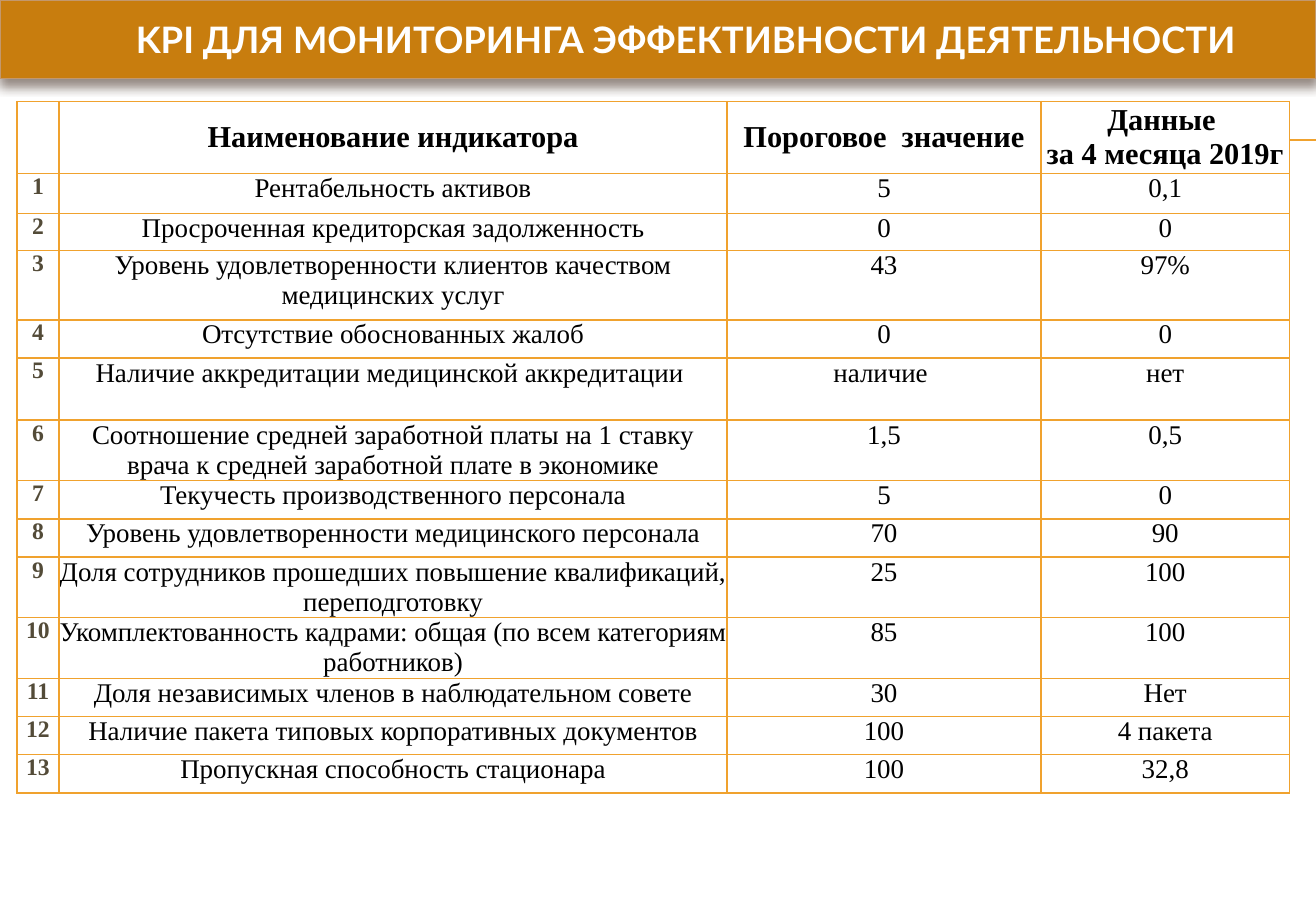
from lxml import etree
from pptx import Presentation
from pptx import util as u
from pptx.dml import color
from pptx.enum import shapes, text
from pptx.oxml import ns, parse_xml

SERIF = "Times New Roman"
ORANGE = "F0A22E"
HEADINGS = ["", "Наименование индикатора", "Пороговое  значение", "Данные \nза 4 месяца 2019г"]
INDICATORS = [
    ("Рентабельность активов", "5", "0,1", 23.7),
    ("Просроченная кредиторская задолженность", "0", "0", 22.2),
    ("Уровень удовлетворенности клиентов качеством медицинских услуг", "43", "97%", 41),
    ("Отсутствие обоснованных жалоб", "0", "0", 22.6),
    ("Наличие аккредитации медицинской аккредитации ", "наличие ", "нет", 36.8),
    ("Соотношение средней заработной платы на 1 ставку врача к средней "
     "заработной плате в экономике", "1,5", "0,5", 36),
    ("Текучесть производственного персонала", "5", "0", 22.6),
    ("Уровень удовлетворенности медицинского персонала", "70", "90", 22.6),
    ("Доля сотрудников прошедших повышение квалификаций, переподготовку", "25", "100", 36),
    ("Укомплектованность кадрами: общая (по всем категориям работников)", "85", "100", 36),
    ("Доля независимых членов в наблюдательном совете", "30", "Нет", 22.6),
    ("Наличие пакета типовых корпоративных документов", "100", "4 пакета", 22.6),
    ("Пропускная способность стационара", "100", "32,8", 22.6),
]


def rgb(value):
    return color.RGBColor.from_string(value)


def format_text(frame, size, font, shade, bold):
    for para in frame.paragraphs:
        para.alignment = text.PP_ALIGN.CENTER
        for span in para.runs:
            span.font.size = u.Pt(size)
            span.font.name = font
            span.font.bold = bold
            span.font.color.rgb = rgb(shade)


def add_shadow(box, shade, blur, distance, alpha):
    box.shadow.inherit = False
    effects = box._element.spPr.find(ns.qn("a:effectLst"))
    effects.append(parse_xml(
        f'<a:outerShdw {ns.nsdecls("a")} blurRad="{u.Pt(blur)}" dist="{u.Pt(distance)}" '
        f'dir="5400000" rotWithShape="0"><a:srgbClr val="{shade}">'
        f'<a:alpha val="{alpha * 1000}"/></a:srgbClr></a:outerShdw>'))


def add_borders(cell, shade, width):
    properties = cell._tc.get_or_add_tcPr()
    for index, side in enumerate(("lnL", "lnR", "lnT", "lnB")):
        properties.insert(index, parse_xml(
            f'<a:{side} {ns.nsdecls("a")} w="{u.Pt(width)}"><a:solidFill>'
            f'<a:srgbClr val="{shade}"/></a:solidFill></a:{side}>'))


def add_rules(page, left, top, width):
    for offset in (0, 0.6):
        rule = page.shapes.add_connector(
            shapes.MSO_CONNECTOR.STRAIGHT, u.Pt(left), u.Pt(top + offset),
            u.Pt(left + width), u.Pt(top + offset))
        rule.line.color.rgb = rgb(ORANGE)
        rule.line.width = u.Pt(0.75)
        etree.SubElement(rule._element.spPr, ns.qn("a:effectLst"))


def add_banner(page, left, top, width, height):
    banner = page.shapes.add_shape(
        shapes.MSO_SHAPE.RECTANGLE, u.Pt(left), u.Pt(top), u.Pt(width), u.Pt(height))
    banner.fill.solid()
    banner.fill.fore_color.rgb = rgb("C87D0E")
    banner.line.color.rgb = rgb("C3986D")
    banner.line.width = u.Pt(0.79)
    add_shadow(banner, "4E3B30", 6, 4, 60)
    frame = banner.text_frame
    frame.word_wrap = True
    frame.margin_left = u.Pt(40)
    frame.vertical_anchor = text.MSO_ANCHOR.MIDDLE
    frame.text = "KPI ДЛЯ МОНИТОРИНГА ЭФФЕКТИВНОСТИ ДЕЯТЕЛЬНОСТИ"
    format_text(frame, 21.6, "Lato", "FFFFFF", True)


def add_indicator_table(page, left, top, widths, header_height):
    rows = [HEADINGS]
    heights = [header_height]
    for number, (*values, height) in enumerate(INDICATORS, 1):
        rows.append([str(number), *values])
        heights.append(height)
    table = page.shapes.add_table(
        len(rows), len(widths), u.Pt(left), u.Pt(top),
        u.Pt(sum(widths)), u.Pt(sum(heights))).table
    table.horz_banding = False
    for column, width in zip(table.columns, widths):
        column.width = u.Pt(width)
    for r, (values, height) in enumerate(zip(rows, heights)):
        table.rows[r].height = u.Pt(height)
        for c, value in enumerate(values):
            cell = table.cell(r, c)
            cell.fill.solid()
            cell.fill.fore_color.rgb = rgb("FFFFFF")
            cell.margin_left = cell.margin_right = 0
            cell.margin_top = cell.margin_bottom = 0
            add_borders(cell, ORANGE, 1)
            cell.text_frame.text = value
            if r == 0:
                cell.vertical_anchor = text.MSO_ANCHOR.MIDDLE
                format_text(cell.text_frame, 18, SERIF, "000000", True)
            elif c == 0:
                format_text(cell.text_frame, 14, SERIF, "534B38", True)
            else:
                format_text(cell.text_frame, 16, SERIF, "000000", False)


def main():
    deck = Presentation()
    deck.slide_width = u.Pt(780)
    deck.slide_height = u.Pt(540)
    page = deck.slides.add_slide(deck.slide_layouts[6])
    add_rules(page, 44, 82.8, 736)
    add_banner(page, 0, 0, 780, 46.6)
    add_indicator_table(page, 10, 60.2, [25, 396, 186, 147.4], 42.5)
    deck.save("out.pptx")


if __name__ == "__main__":
    main()
